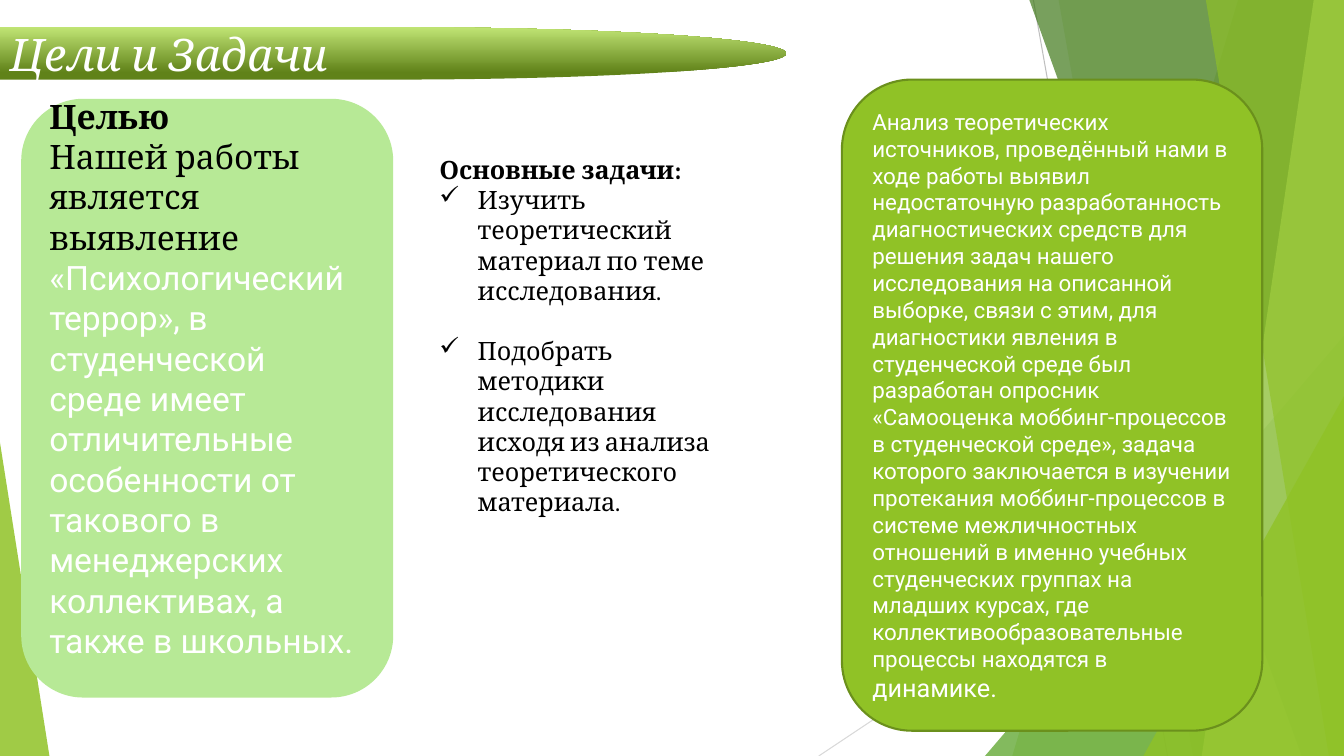
from lxml import etree
from pptx import Presentation
from pptx.dml.color import RGBColor
from pptx.enum.shapes import MSO_CONNECTOR, MSO_SHAPE
from pptx.enum.text import MSO_ANCHOR, MSO_AUTO_SIZE, PP_ALIGN
from pptx.oxml.ns import qn
from pptx.util import Inches, Pt

STRAIGHT = MSO_CONNECTOR.STRAIGHT
TRIANGLE = MSO_SHAPE.ISOSCELES_TRIANGLE
DELAY = MSO_SHAPE.FLOWCHART_DELAY
ROUNDED = MSO_SHAPE.ROUNDED_RECTANGLE
MIDDLE = MSO_ANCHOR.MIDDLE
LEFT = PP_ALIGN.LEFT
FIT_SHAPE = MSO_AUTO_SIZE.SHAPE_TO_FIT_TEXT

THEME = {
    "green": "90C226", "leaf": "54A021", "forest": "3F7819", "lime": "C0E474",
    "pale": "B7E996", "olive": "608219", "edge": "6B901C",
    "gray": "BFBFBF", "silver": "D9D9D9", "white": "FFFFFF", "black": "000000",
    "serif": "Cambria", "sans": "Roboto",
    "title": 32, "goal": 24, "task": 18, "note": 16,
}

presentation = Presentation()
presentation.slide_width = Inches(13.33)
presentation.slide_height = Inches(7.5)
slide = presentation.slides.add_slide(presentation.slide_layouts[6])
shapes = slide.shapes
column = presentation.slide_width / 100
row = presentation.slide_height / 100


def paint(shape, color, opacity=100):
    shape.shadow.inherit = False
    shape.line.fill.background()
    shape.fill.solid()
    shape.fill.fore_color.rgb = RGBColor.from_string(THEME[color])
    if opacity < 100:
        tone = shape.fill._xPr.find(qn("a:solidFill"))[0]
        etree.SubElement(tone, qn("a:alpha"), val=str(opacity * 1000))


def add_run(paragraph, text, size, font, color, bold=False, italic=False):
    paragraph.alignment = LEFT
    run = paragraph.add_run()
    run.text = text
    run.font.size = Pt(THEME[size])
    run.font.name = THEME[font]
    run.font.color.rgb = RGBColor.from_string(THEME[color])
    run.font.bold = bold
    run.font.italic = italic


for x1, y1, x2, y2, color in [
    (76.89, 0, 86.87, 100, "gray"),
    (100, 53.73, 60.92, 100, "silver"),
]:
    ray = shapes.add_connector(
        STRAIGHT, int(x1 * column), int(y1 * row), int(x2 * column), int(y2 * row))
    ray.line.color.rgb = RGBColor.from_string(THEME[color])
    ray.line.width = Pt(0.75)
    etree.SubElement(ray._element.spPr, qn("a:effectLst"))

for kind, first, second, color, opacity in [
    ("band", 92.12, 75.32, "green", 30),
    ("band", 78.77, 88.75, "green", 20),
    ("right corner", 73.29, 44.4, "leaf", 72),
    ("band", 76.59, 96.85, "forest", 70),
    ("band", 97.75, 89.42, "lime", 70),
    ("band", 89.72, 98.87, "green", 65),
    ("right corner", 85.07, 52.4, "green", 80),
    ("left corner", 3.68, 58.53, "green", 85),
]:
    if kind == "band":
        builder = shapes.build_freeform(int(first * column), 0)
        builder.add_line_segments([
            (int(x * column), int(y * row))
            for x, y in [(100, 0), (100, 100), (second, 100)]])
        facet = builder.convert_to_shape()
    else:
        on_right = kind == "right corner"
        left, width = (first, 100 - first) if on_right else (0, first)
        facet = shapes.add_shape(
            TRIANGLE, int(left * column), int(second * row),
            int(width * column), int((100 - second) * row))
        facet.adjustments[0] = 1 if on_right else 0
    paint(facet, color, opacity)

tasks = shapes.add_textbox(
    int(31.96 * column), int(19.73 * row), int(24.16 * column), int(53.87 * row))
tasks.text_frame.word_wrap = True
tasks.text_frame.auto_size = FIT_SHAPE
add_run(tasks.text_frame.paragraphs[0], "Основные задачи:", "task", "serif", "black", bold=True)
for text, gap in [
    ("Изучить теоретический материал по теме исследования.", 0),
    ("Подобрать методики исследования исходя из анализа теоретического материала.", 21.6),
]:
    paragraph = tasks.text_frame.add_paragraph()
    paragraph.space_before = Pt(gap)
    add_run(paragraph, text, "task", "serif", "black")
    properties = paragraph._p.get_or_add_pPr()
    properties.set("marL", str(Inches(0.38)))
    properties.set("indent", str(-Inches(0.38)))
    etree.SubElement(properties, qn("a:buChar"), char="✓")

panels = []
for preset, left, top, width, height, color in [
    (DELAY, 0, 3.6, 58.51, 6.93, "lime"),
    (ROUNDED, 1.58, 13.07, 27.68, 79.2, "pale"),
    (ROUNDED, 62.64, 10.53, 31.28, 86.13, "green"),
]:
    panel = shapes.add_shape(
        preset, int(left * column), int(top * row), int(width * column), int(height * row))
    paint(panel, color)
    panel.text_frame.word_wrap = True
    panel.text_frame.vertical_anchor = MIDDLE
    panels.append(panel)
title, goal, analysis = panels

title.fill.gradient()
title.fill.gradient_angle = 90
for stop, position, color in zip(title.fill.gradient_stops, (0.13, 1), ("olive", "lime")):
    stop.position = position
    stop.color.rgb = RGBColor.from_string(THEME[color])
add_run(title.text_frame.paragraphs[0], "Цели и Задачи", "title", "serif", "white", italic=True)

goal.text_frame.margin_bottom = Inches(0.45)
paragraph = goal.text_frame.paragraphs[0]
add_run(paragraph, "Целью", "goal", "serif", "black", bold=True)
paragraph.add_line_break()
add_run(paragraph, "Нашей работы является выявление ", "goal", "serif", "black")
add_run(
    paragraph,
    "«Психологический террор», в студенческой среде имеет отличительные особенности "
    "от такового в менеджерских коллективах, а также в школьных.",
    "goal", "sans", "white")

analysis.line.color.rgb = RGBColor.from_string(THEME["edge"])
analysis.line.width = Pt(1.5)
paragraph = analysis.text_frame.paragraphs[0]
add_run(
    paragraph,
    "Анализ теоретических источников, проведённый нами в ходе работы выявил "
    "недостаточную разработанность диагностических средств для решения задач нашего "
    "исследования на описанной выборке, связи с этим, для диагностики явления в "
    "студенческой среде был разработан опросник «Самооценка моббинг-процессов в "
    "студенческой среде», задача которого заключается в изучении протекания "
    "моббинг-процессов в системе межличностных отношений в именно учебных студенческих "
    "группах на младших курсах, где коллективообразовательные процессы находятся в ",
    "note", "sans", "white")
add_run(paragraph, "динамике.", "task", "sans", "white")

presentation.save("out.pptx")
